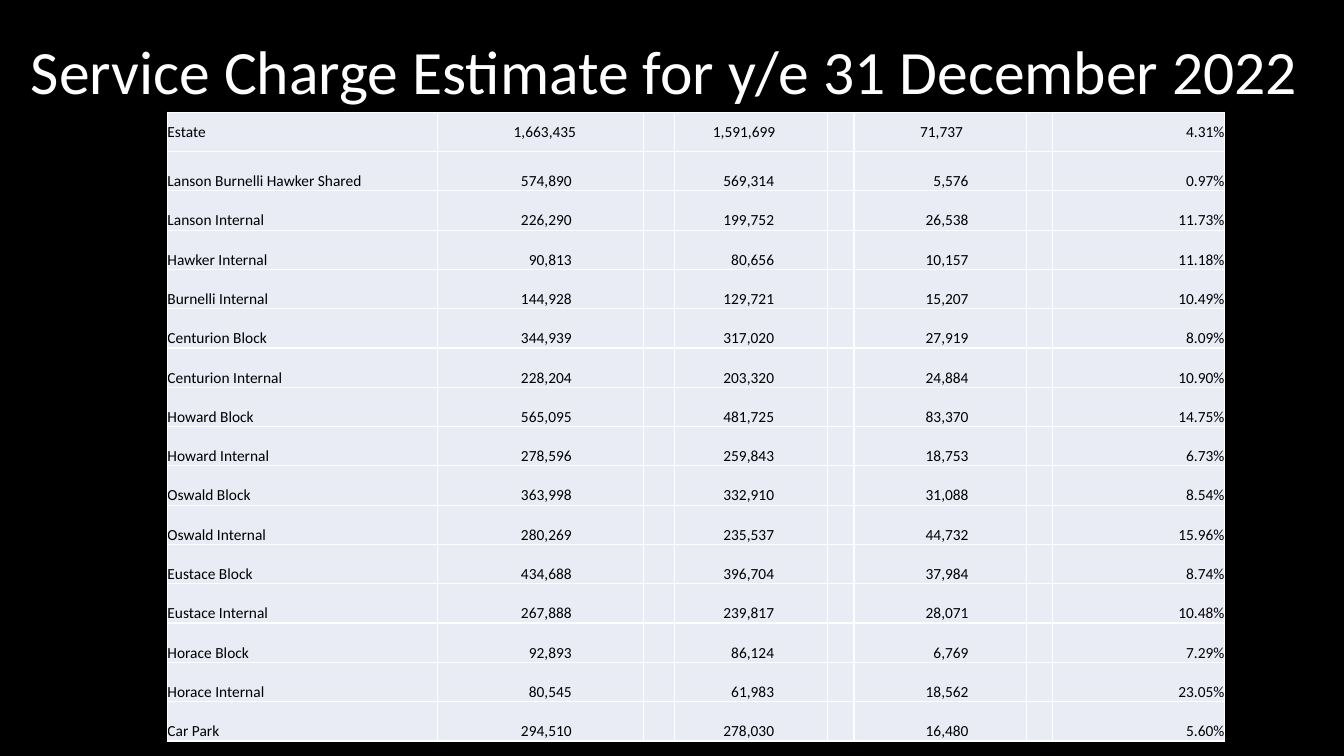
from lxml import etree
from pptx import Presentation
from pptx.dml.color import RGBColor
from pptx.enum import text
from pptx.oxml import ns
from pptx.util import Cm, Pt

COLOURS = {"page": "000000", "title": "FFFFFF", "cell": "E9EBF5",
           "text": "000000", "border": "FFFFFF"}
FONT = "Calibri"
TITLE = "Service Charge Estimate for y/e 31 December 2022 "

COLUMN_WIDTHS = [6.81, 5.18, 0.79, 3.86, 0.66, 4.34, 0.66, 4.34]
ROW_HEIGHT = 0.99
VALUE_COLUMNS = [0, 1, 3, 5, 7]  # the columns between them are spacers
RIGHT_MARGINS = [0, 1.8, 1.35, 1.45, 0]
TOP_ROW_MARGINS = [0, 1.69, 1.32, 1.59, 0]

CHARGES = [
    ("Estate", "1,663,435", "1,591,699", "71,737", "4.31%"),
    ("Lanson Burnelli Hawker Shared", "574,890", "569,314", "5,576", "0.97%"),
    ("Lanson Internal", "226,290", "199,752", "26,538", "11.73%"),
    ("Hawker Internal", "90,813", "80,656", "10,157", "11.18%"),
    ("Burnelli Internal", "144,928", "129,721", "15,207", "10.49%"),
    ("Centurion Block", "344,939", "317,020", "27,919", "8.09%"),
    ("Centurion Internal", "228,204", "203,320", "24,884", "10.90%"),
    ("Howard Block", "565,095", "481,725", "83,370", "14.75%"),
    ("Howard Internal", "278,596", "259,843", "18,753", "6.73%"),
    ("Oswald Block", "363,998", "332,910", "31,088", "8.54%"),
    ("Oswald Internal", "280,269", "235,537", "44,732", "15.96%"),
    ("Eustace Block", "434,688", "396,704", "37,984", "8.74%"),
    ("Eustace Internal", "267,888", "239,817", "28,071", "10.48%"),
    ("Horace Block", "92,893", "86,124", "6,769", "7.29%"),
    ("Horace Internal", "80,545", "61,983", "18,562", "23.05%"),
    ("Car Park", "294,510", "278,030", "16,480", "5.60%"),
]


def colour(name):
    return RGBColor.from_string(COLOURS[name])


def set_all(target, values):
    for name, value in values.items():
        setattr(target, name, value)


def write(para, words, size, colour_name, alignment):
    para.alignment = alignment
    span = para.add_run()
    span.text = words
    set_all(span.font, {"name": FONT, "size": Pt(size), "bold": False})
    span.font.color.rgb = colour(colour_name)


def add_title(page):
    box = page.shapes.title
    set_all(box, {"left": Cm(0.33), "top": Cm(0.05),
                  "width": Cm(33.2), "height": Cm(3.68)})
    set_all(box.text_frame, {"word_wrap": True,
                             "auto_size": text.MSO_AUTO_SIZE.NONE,
                             "vertical_anchor": text.MSO_ANCHOR.MIDDLE})
    para = box.text_frame.paragraphs[0]
    para.line_spacing = 0.9
    write(para, TITLE, 44, "title", text.PP_ALIGN.CENTER)


def add_borders(cell):
    properties = cell._tc.get_or_add_tcPr()
    for side in ("a:lnL", "a:lnR", "a:lnT", "a:lnB"):
        line = etree.SubElement(properties, ns.qn(side), w=str(Pt(1)))
        fill = etree.SubElement(line, ns.qn("a:solidFill"))
        etree.SubElement(fill, ns.qn("a:srgbClr"), val=COLOURS["border"])


def format_cell(cell, anchor):
    set_all(cell, {"margin_left": 0, "margin_right": 0, "margin_top": 0,
                   "margin_bottom": 0, "vertical_anchor": anchor})
    add_borders(cell)
    cell.fill.solid()
    cell.fill.fore_color.rgb = colour("cell")


def add_charges(page):
    table = page.shapes.add_table(
        len(CHARGES), len(COLUMN_WIDTHS), Cm(4.22), Cm(2.83),
        Cm(sum(COLUMN_WIDTHS)), Cm(ROW_HEIGHT * len(CHARGES))).table
    set_all(table, {"first_row": False, "horz_banding": False})
    for column, width in zip(table.columns, COLUMN_WIDTHS):
        column.width = Cm(width)
    for index, (row, charge) in enumerate(zip(table.rows, CHARGES)):
        row.height = Cm(ROW_HEIGHT)
        anchor = text.MSO_ANCHOR.BOTTOM if index else text.MSO_ANCHOR.MIDDLE
        margins = RIGHT_MARGINS if index else TOP_ROW_MARGINS
        for cell in row.cells:
            format_cell(cell, anchor)
        for column, words, margin in zip(VALUE_COLUMNS, charge, margins):
            cell = row.cells[column]
            cell.margin_right = Cm(margin)
            alignment = text.PP_ALIGN.RIGHT if column else text.PP_ALIGN.LEFT
            write(cell.text_frame.paragraphs[0], words, 11, "text", alignment)


def main():
    deck = Presentation()
    set_all(deck, {"slide_width": Cm(33.87), "slide_height": Cm(19.05)})
    page = deck.slides.add_slide(deck.slide_layouts.get_by_name("Title Only"))
    page.background.fill.solid()
    page.background.fill.fore_color.rgb = colour("page")
    add_title(page)
    add_charges(page)
    deck.save("out.pptx")


if __name__ == "__main__":
    main()
